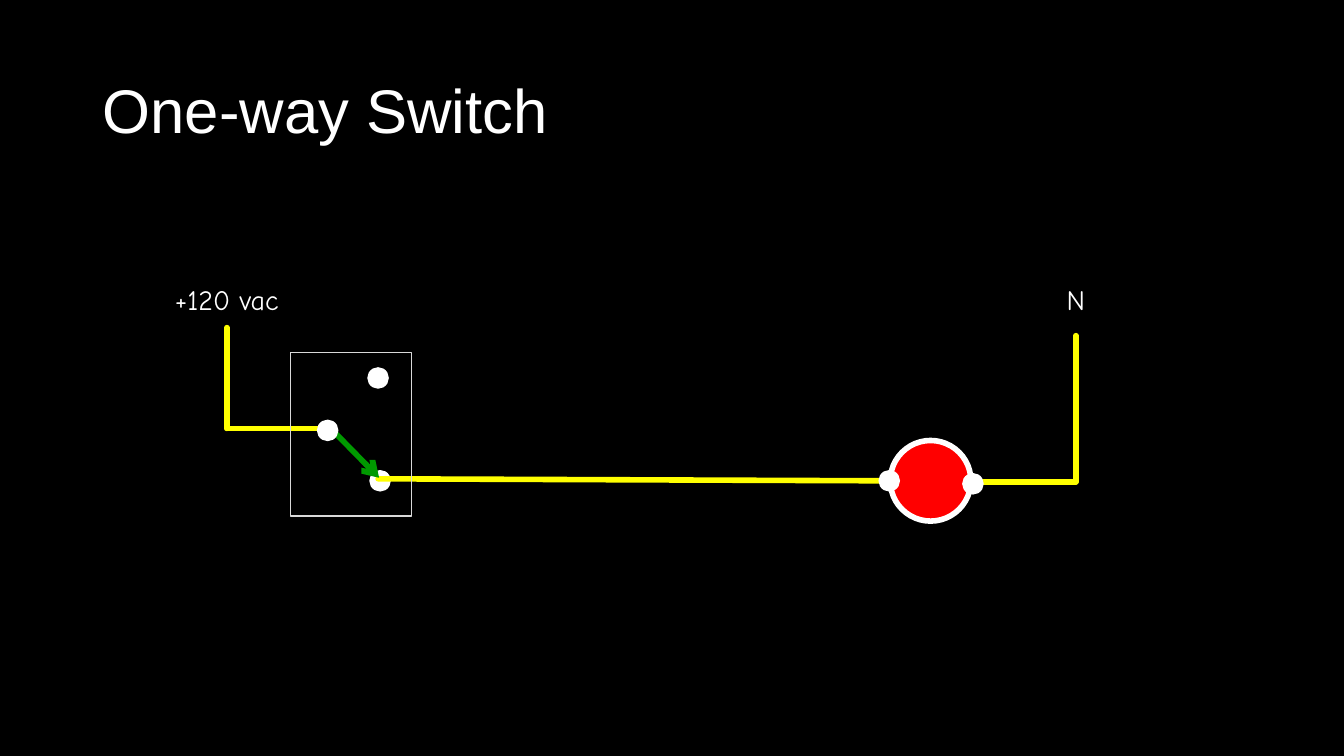
from lxml import etree
from pptx import Presentation
from pptx.dml.color import RGBColor
from pptx.enum.shapes import MSO_CONNECTOR, MSO_SHAPE
from pptx.enum.text import MSO_ANCHOR, PP_ALIGN
from pptx.oxml.ns import qn
from pptx.util import Inches, Pt

STRAIGHT = MSO_CONNECTOR.STRAIGHT
OVAL = MSO_SHAPE.OVAL
RECTANGLE = MSO_SHAPE.RECTANGLE
MIDDLE, TOP = MSO_ANCHOR.MIDDLE, MSO_ANCHOR.TOP
LEFT, CENTER = PP_ALIGN.LEFT, PP_ALIGN.CENTER

COLORS = {
    "background": "000000",
    "white": "FFFFFF",
    "wire": "FFFF00",
    "switch_arm": "009900",
    "lamp": "FF0000",
    "switch_box": "D9D9D9",
}
DOT = 0.2


def color(name):
    return RGBColor.from_string(COLORS[name])


def add_part(kind, box, fill, outline, width):
    shape = slide.shapes.add_shape(kind, *map(Inches, box))
    shape.shadow.inherit = False
    if fill:
        shape.fill.solid()
        shape.fill.fore_color.rgb = color(fill)
    else:
        shape.fill.background()
    shape.line.color.rgb = color(outline)
    shape.line.width = Pt(width)


presentation = Presentation()
presentation.slide_width = Inches(13.33)
presentation.slide_height = Inches(7.5)
slide = presentation.slides.add_slide(presentation.slide_layouts[6])
slide.background.fill.solid()
slide.background.fill.fore_color.rgb = color("background")

add_part(OVAL, (3.67, 4.67, DOT, DOT), "white", "white", 1)

conductors = [
    ((3.75, 4.75, 8.72, 4.77), "wire"),
    ((2.25, 3.25, 2.25, 4.25), "wire"),
    ((2.25, 4.25, 3.25, 4.25), "wire"),
    ((9.67, 4.78, 10.67, 4.78), "wire"),
    ((10.67, 3.33, 10.67, 4.78), "wire"),
    ((3.29, 4.26, 3.76, 4.74), "switch_arm"),
]
for ends, name in conductors:
    connector = slide.shapes.add_connector(STRAIGHT, *map(Inches, ends))
    connector.line.color.rgb = color(name)
    connector.line.width = Pt(4)
    properties = connector.element.spPr
    outline = properties.find(qn("a:ln"))
    outline.set("cap", "rnd")
    if name == "switch_arm":
        etree.SubElement(outline, qn("a:tailEnd"), type="arrow")
    etree.SubElement(properties, qn("a:effectLst"))

add_part(OVAL, (8.83, 4.37, 0.8, 0.8), "lamp", "white", 4)
add_part(RECTANGLE, (2.88, 3.5, 1.2, 1.62), None, "switch_box", 1)
for left, top in [(3.65, 3.65), (3.15, 4.17), (8.72, 4.67), (9.55, 4.7)]:
    add_part(OVAL, (left, top, DOT, DOT), "white", "white", 1)

texts = [
    ("One-way Switch", (0.92, 0.4, 11.5, 1.45), 44, "Arial", LEFT, MIDDLE, 0.9),
    ("+120 vac", (1.5, 2.75, 1.5, 0.44), 20, "Comic Neue", CENTER, TOP, 1.0),
    ("N", (9.92, 2.75, 1.5, 0.44), 20, "Comic Neue", CENTER, TOP, 1.0),
]
for text, box, size, font_name, alignment, anchor, spacing in texts:
    text_frame = slide.shapes.add_textbox(*map(Inches, box)).text_frame
    text_frame.word_wrap = True
    text_frame.vertical_anchor = anchor
    text_frame.text = text
    paragraph = text_frame.paragraphs[0]
    paragraph.alignment = alignment
    paragraph.line_spacing = spacing
    font = paragraph.runs[0].font
    font.size = Pt(size)
    font.name = font_name
    font.color.rgb = color("white")

presentation.save("out.pptx")
